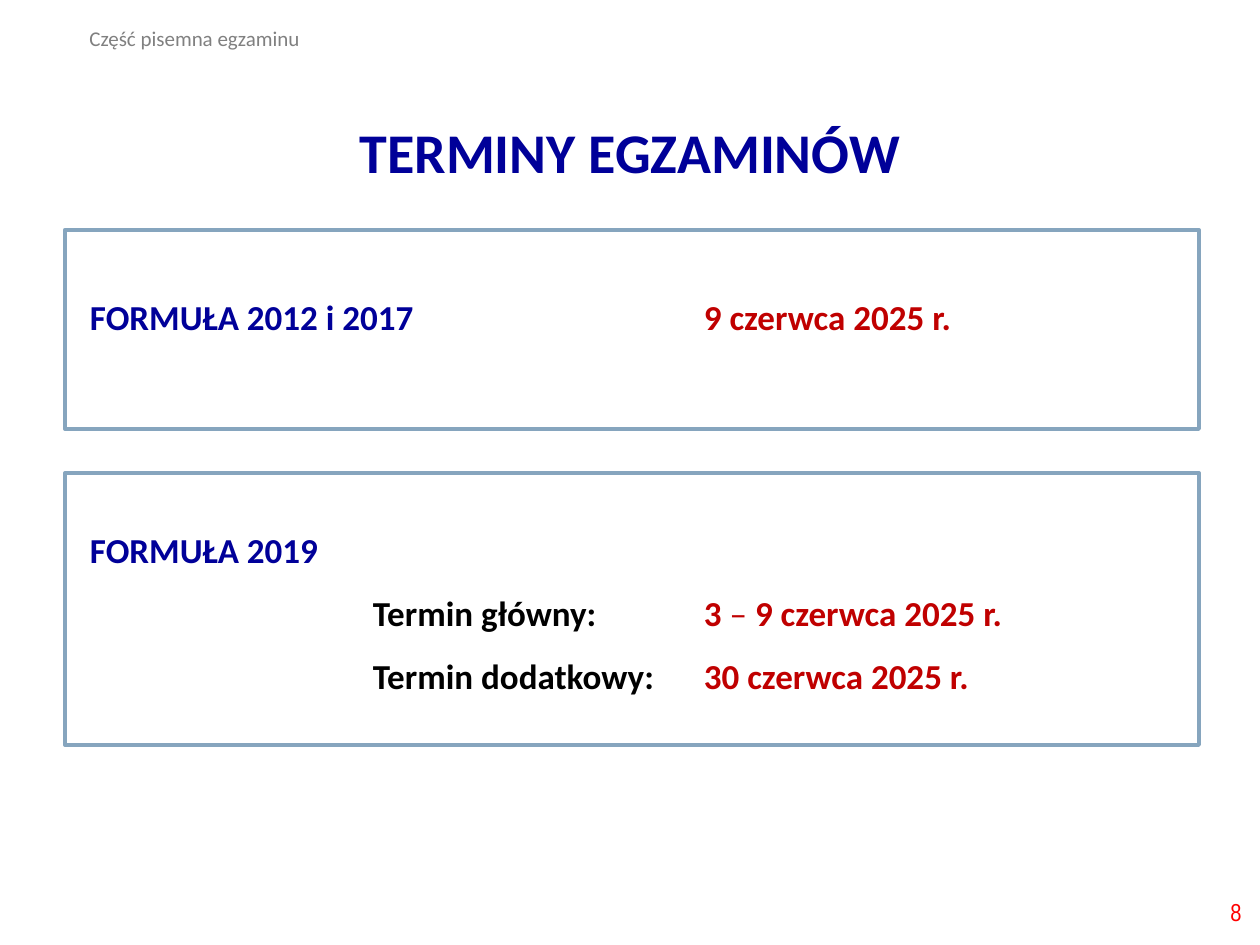
from dataclasses import dataclass

from lxml.etree import SubElement
from pptx import Presentation
from pptx.dml.color import RGBColor
from pptx.enum.shapes import MSO_SHAPE as Shape
from pptx.enum.text import MSO_ANCHOR as Anchor, PP_ALIGN as Align
from pptx.oxml.ns import qn
from pptx.util import Pt

PX = 914400 // 126


@dataclass(frozen=True)
class Theme:
    navy: str = "000099"
    red: str = "C00000"
    black: str = "000000"
    gray: str = "808080"
    number: str = "FF0000"
    border: str = "86A5BE"
    body_font: str = "Calibri"
    number_font: str = "Arial Narrow"
    title_size: int = 32
    body_size: int = 20
    number_size: int = 14
    header_size: int = 12


THEME = Theme()
LABEL_TAB, DATE_TAB = 283, 614


def px(value):
    return value * PX


def set_values(target, values):
    for name, value in values.items():
        setattr(target, name, value)


def add_run(paragraph, text, color, size, bold=False, font=THEME.body_font):
    run = paragraph.add_run()
    run.text = text
    set_values(run.font, {"name": font, "size": Pt(size), "bold": bold})
    run.font.color.rgb = RGBColor.from_string(color)


def add_tabs(paragraph, positions):
    tab_list = SubElement(paragraph._p.get_or_add_pPr(), qn("a:tabLst"))
    for position in positions:
        SubElement(tab_list, qn("a:tab"), pos=str(px(position)), algn="l")


def add_label(slide, box, text, color, size, frame=None, style=None, **font):
    label = slide.shapes.add_textbox(*map(px, box))
    set_values(label.text_frame, {"word_wrap": True, **(frame or {})})
    paragraph = label.text_frame.paragraphs[0]
    set_values(paragraph, style or {})
    add_run(paragraph, text, color, size, **font)


def add_panel(slide, top, height, lines, tabs, spacing, bottom):
    """Draw a framed box; each line is a list of (text, color, bold) runs."""
    panel = slide.shapes.add_shape(
        Shape.RECTANGLE, *map(px, (65, top, 1134, height)))
    panel.shadow.inherit = False
    panel.fill.background()
    panel.line.color.rgb = RGBColor.from_string(THEME.border)
    panel.line.width = Pt(2.25)
    frame = panel.text_frame
    set_values(frame, {"word_wrap": True, "vertical_anchor": Anchor.MIDDLE,
                       "margin_left": px(25), "margin_top": px(6),
                       "margin_bottom": px(bottom)})
    for index, runs in enumerate(lines):
        paragraph = frame.add_paragraph() if index else frame.paragraphs[0]
        set_values(paragraph, {"alignment": Align.LEFT,
                               "line_spacing": spacing})
        add_tabs(paragraph, tabs)
        for text, color, bold in runs:
            add_run(paragraph, text, color, THEME.body_size, bold)


def main():
    presentation = Presentation()
    set_values(presentation, {"slide_width": px(1260),
                              "slide_height": px(945)})
    slide = presentation.slides.add_slide(presentation.slide_layouts[6])

    # Section header, title and page number
    add_label(slide, (77, 19, 336, 38), "Część pisemna egzaminu",
              THEME.gray, THEME.header_size)
    add_label(slide, (87, 77, 1086, 115), "TERMINY EGZAMINÓW",
              THEME.navy, THEME.title_size,
              {"vertical_anchor": Anchor.MIDDLE},
              {"alignment": Align.CENTER, "line_spacing": 1.5}, bold=True)
    add_label(slide, (970, 887, 284, 50), "8",
              THEME.number, THEME.number_size,
              {"vertical_anchor": Anchor.MIDDLE},
              {"alignment": Align.RIGHT}, font=THEME.number_font)

    # Exam dates for the 2012 and 2017 formulas
    add_panel(slide, 230, 199,
              [[("FORMUŁA 2012 i 2017", THEME.navy, True),
                ("\t9 czerwca 2025 r.", THEME.red, True)]],
              [DATE_TAB], 0.9, 26)

    # Exam dates for the 2019 formula
    add_panel(slide, 473, 272,
              [[("FORMUŁA 2019", THEME.navy, True)],
               [("\tTermin główny:", THEME.black, True),
                ("\t3 ", THEME.red, True),
                ("– ", THEME.red, False),
                ("9 czerwca 2025 r.", THEME.red, True)],
               [("\tTermin dodatkowy:", THEME.black, True),
                ("\t30 czerwca 2025 r.", THEME.red, True)]],
              [LABEL_TAB, DATE_TAB], 1.5, 20)

    presentation.save("out.pptx")


if __name__ == "__main__":
    main()
